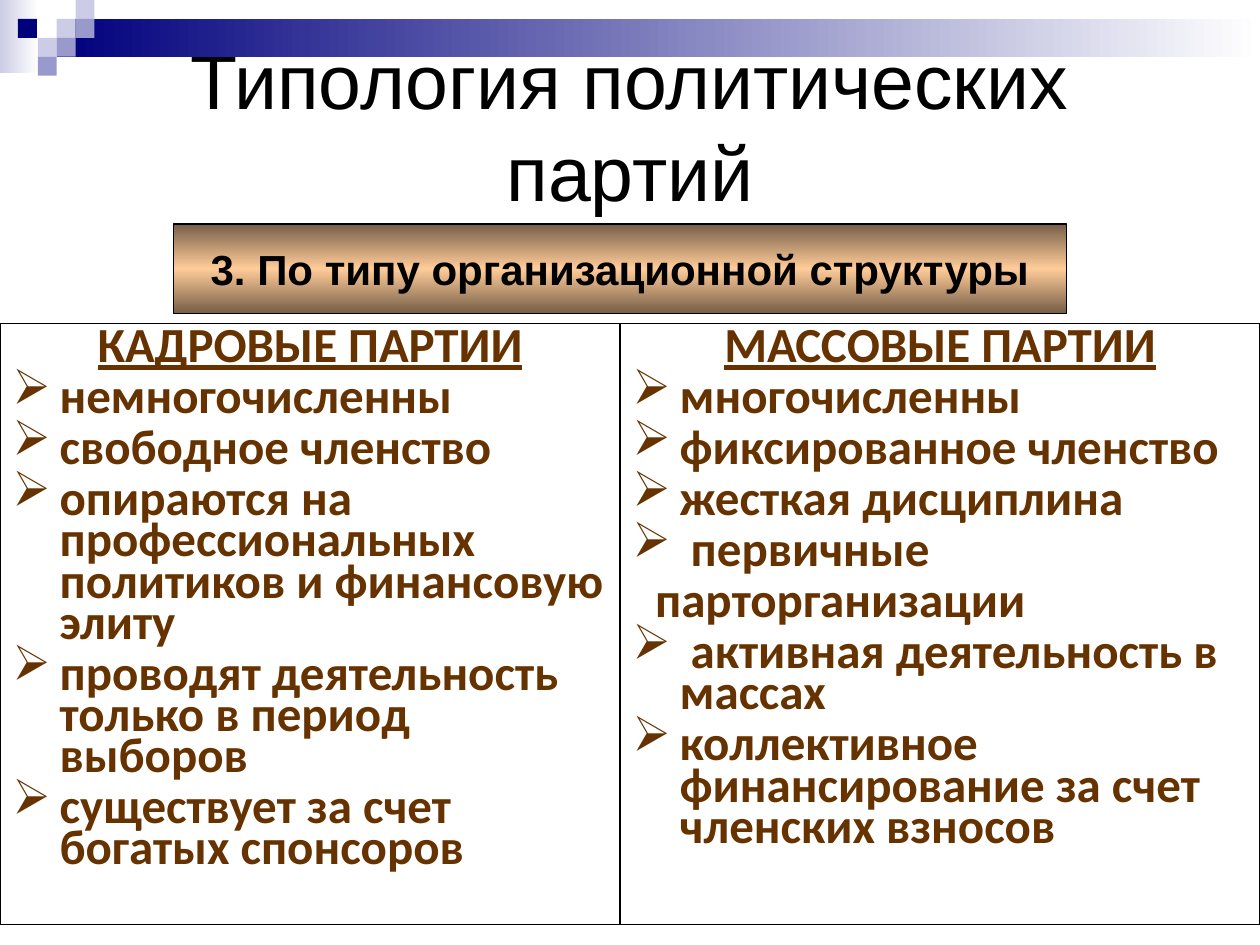
import pptx
import pptx.dml.color
import pptx.enum.shapes
import pptx.enum.text
import pptx.oxml
import pptx.oxml.ns
import pptx.util
from lxml import etree

Pt = pptx.util.Pt
ALIGN = pptx.enum.text.PP_ALIGN
ANCHOR = pptx.enum.text.MSO_ANCHOR

COLORS = {
    "navy": "00007D",
    "lilac": "9999CC",
    "pale": "CCCCE6",
    "white": "FFFFFF",
    "black": "000000",
    "peach": "FFCC99",
    "bronze": "765E47",
    "brown": "663300",
}

HANGING = 27
BULLET = "➢"

CADRE_ITEMS = [
    "немногочисленны",
    "свободное членство",
    "опираются на профессиональных политиков и финансовую элиту",
    "проводят деятельность только в период выборов",
    "существует за счет богатых спонсоров",
]
MASS_ITEMS = [
    "многочисленны",
    "фиксированное членство",
    "жесткая дисциплина",
    " первичные",
    "парторганизации",
    " активная деятельность в массах",
    "коллективное финансирование за счет членских взносов",
]
CONTINUATIONS = {"парторганизации"}


def rgb(name):
    return pptx.dml.color.RGBColor.from_string(COLORS[name])


def add_box(slide, box, outlined=False):
    shape = slide.shapes.add_shape(
        pptx.enum.shapes.MSO_SHAPE.RECTANGLE, *[Pt(length) for length in box])
    shape.shadow.inherit = False
    shape.fill.background()
    if outlined:
        shape.line.color.rgb = rgb("black")
        shape.line.width = Pt(0.75)
    else:
        shape.line.fill.background()
    return shape


def fill_solid(shape, color):
    shape.fill.solid()
    shape.fill.fore_color.rgb = rgb(color)


def fill_gradient(shape, colors, angle):
    shape.fill.gradient()
    shape.fill.gradient_angle = angle
    stops = shape._element.spPr.find(".//" + pptx.oxml.ns.qn("a:gsLst"))
    for stop in list(stops):
        stops.remove(stop)
    for index, color in enumerate(colors):
        position = 100000 * index // (len(colors) - 1)
        stop = etree.SubElement(stops, pptx.oxml.ns.qn("a:gs"), pos=str(position))
        etree.SubElement(stop, pptx.oxml.ns.qn("a:srgbClr"), val=COLORS[color])


def format_font(paragraph, name, size, color, bold=False, underline=False):
    font = paragraph.font
    font.name = name
    font.size = Pt(size)
    font.bold = bold
    font.underline = underline
    font.color.rgb = rgb(color)


def set_indent(paragraph, first_line, bullet=None):
    properties = paragraph._p.get_or_add_pPr()
    properties.set("marL", str(Pt(HANGING)))
    properties.set("indent", str(Pt(first_line)))
    if bullet:
        mark = pptx.oxml.parse_xml(
            f'<a:buChar {pptx.oxml.ns.nsdecls("a")} char="{bullet}"/>')
        font = properties.find(pptx.oxml.ns.qn("a:defRPr"))
        font.addprevious(mark)


def add_header_band(slide, box):
    left, top, width, height = box
    unit = 10.8
    corner = add_box(slide, (left, top, 22, height))
    fill_gradient(corner, ["pale", "white"], 0)
    band_left = left + 3 * unit
    band = add_box(slide, (band_left, top + unit, width - 3 * unit, 2 * unit))
    fill_gradient(band, ["navy", "white"], 0)
    squares = [
        (3, 1, "pale"), (4, 0, "pale"), (4, 1, "lilac"), (2, 2, "pale"),
        (0.95, 1, "navy"), (3, 2, "lilac"), (2, 3, "lilac"),
    ]
    for column, row, color in squares:
        square = add_box(slide, (left + column * unit, top + row * unit, unit, unit))
        fill_solid(square, color)


def place_title(slide, box, text):
    title = slide.shapes.title
    title.left, title.top, title.width, title.height = [Pt(length) for length in box]
    frame = title.text_frame
    frame.text = text
    frame.word_wrap = True
    frame.auto_size = pptx.enum.text.MSO_AUTO_SIZE.NONE
    frame.vertical_anchor = ANCHOR.MIDDLE
    paragraph = frame.paragraphs[0]
    paragraph.alignment = ALIGN.CENTER
    format_font(paragraph, "Arial", 44, "black")


def add_criterion(slide, box, text):
    shape = add_box(slide, box, outlined=True)
    fill_gradient(shape, ["bronze", "peach", "bronze"], 90)
    frame = shape.text_frame
    frame.text = text
    frame.word_wrap = False
    frame.vertical_anchor = ANCHOR.MIDDLE
    paragraph = frame.paragraphs[0]
    paragraph.alignment = ALIGN.CENTER
    format_font(paragraph, "Arial", 24, "black", bold=True)


def add_party_column(slide, box, heading, items):
    frame = add_box(slide, box, outlined=True).text_frame
    frame.word_wrap = True
    frame.vertical_anchor = ANCHOR.TOP
    frame.text = "\n".join([heading] + items)
    for index, paragraph in enumerate(frame.paragraphs):
        is_heading = index == 0
        paragraph.alignment = ALIGN.CENTER if is_heading else ALIGN.LEFT
        paragraph.line_spacing = 0.7
        paragraph.space_before = Pt(5.6)
        format_font(paragraph, "Calibri", 28, "brown", bold=True, underline=is_heading)
        if is_heading:
            set_indent(paragraph, -HANGING)
        elif paragraph.text in CONTINUATIONS:
            set_indent(paragraph, -14)
        else:
            set_indent(paragraph, -HANGING, BULLET)


def main():
    presentation = pptx.Presentation()
    presentation.slide_width = Pt(720)
    presentation.slide_height = Pt(540)
    slide = presentation.slides.add_slide(presentation.slide_layouts[5])
    add_header_band(slide, (0, 0, 720, 42))
    place_title(slide, (36, 36, 648, 70.5), "Типология политических партий")
    add_criterion(slide, (99, 128, 510.5, 51), "3. По типу организационной структуры")
    top, height, middle = 185, 343.5, 354.3
    add_party_column(slide, (0, top, middle, height), "КАДРОВЫЕ ПАРТИИ", CADRE_ITEMS)
    add_party_column(
        slide, (middle, top, 720 - middle, height), "МАССОВЫЕ ПАРТИИ", MASS_ITEMS)
    presentation.save("out.pptx")


if __name__ == "__main__":
    main()
